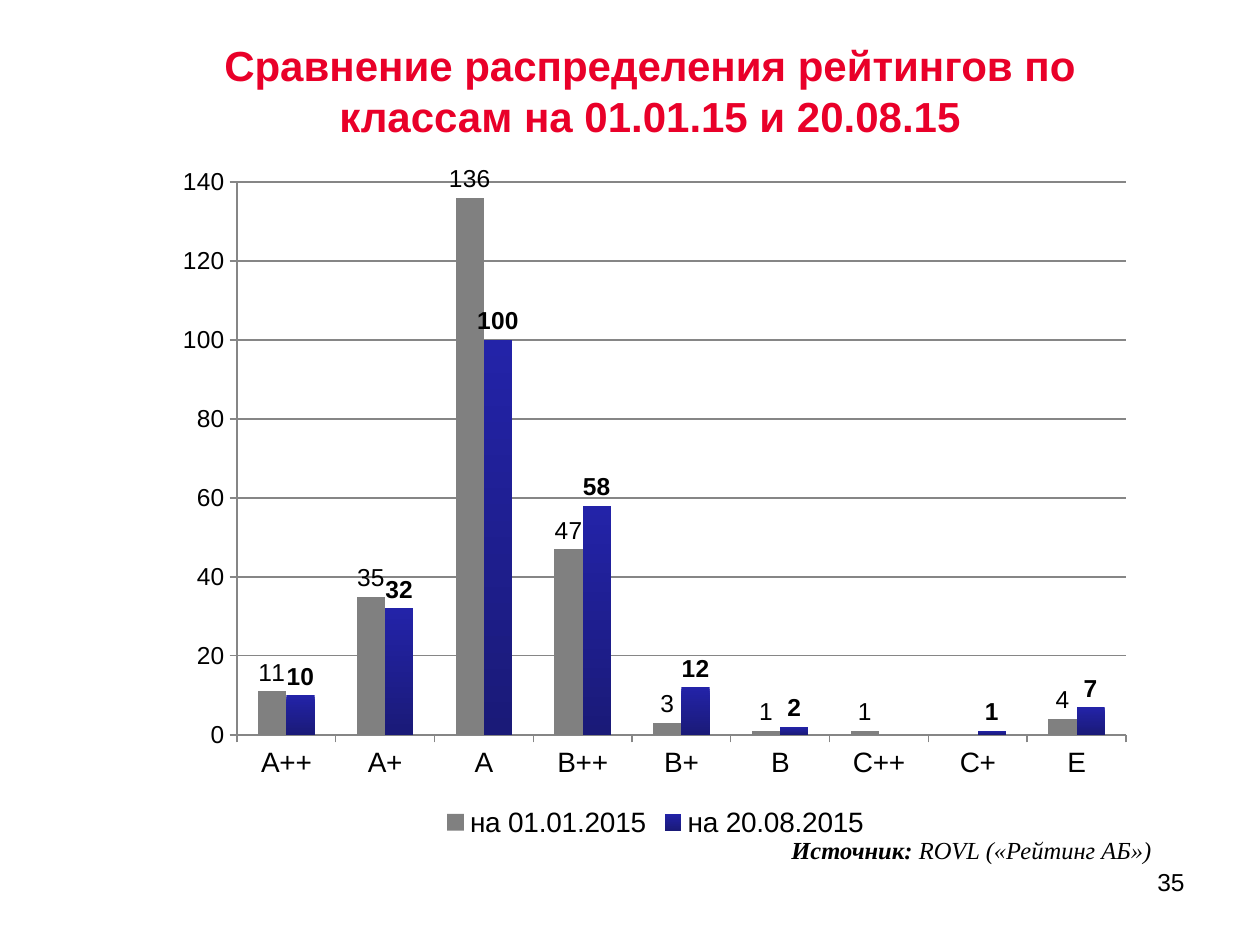
from lxml import etree
from pptx import Presentation
from pptx.chart.data import CategoryChartData
from pptx.dml.color import RGBColor
from pptx.enum.chart import XL_CHART_TYPE, XL_LABEL_POSITION, XL_LEGEND_POSITION, XL_TICK_MARK
from pptx.enum.text import MSO_ANCHOR, PP_ALIGN
from pptx.util import Pt

PX = 914400 / 126
RED = RGBColor(0xE9, 0x00, 0x29)
BLACK = RGBColor(0, 0, 0)
GRAY = RGBColor(0x80, 0x80, 0x80)
AXIS_GRAY = RGBColor(0x86, 0x86, 0x86)
BLUE_TOP = RGBColor(0x23, 0x23, 0xA8)
BLUE_BOTTOM = RGBColor(0x1A, 0x1A, 0x78)
COLUMNS = XL_CHART_TYPE.COLUMN_CLUSTERED
OUTSIDE_END = XL_LABEL_POSITION.OUTSIDE_END
BOTTOM = XL_LEGEND_POSITION.BOTTOM
TICK_OUT = XL_TICK_MARK.OUTSIDE
MIDDLE = MSO_ANCHOR.MIDDLE
CENTER, RIGHT = PP_ALIGN.CENTER, PP_ALIGN.RIGHT


def box(*lengths):
    """Turn px lengths into EMU."""
    return [round(length * PX) for length in lengths]


def set_font(font, size, bold=False, color=BLACK, name="Arial"):
    font.name = name
    font.size = Pt(size)
    font.bold = bold
    font.color.rgb = color


presentation = Presentation()
presentation.slide_width, presentation.slide_height = box(1260, 945)
slide = presentation.slides.add_slide(presentation.slide_layouts[5])

# Title
title = slide.shapes.title
title.left, title.top, title.width, title.height = box(134, 45, 1032, 90)
title.text_frame.text = "Сравнение распределения рейтингов по классам на 01.01.15 и 20.08.15"
title.text_frame.vertical_anchor = MIDDLE
paragraph = title.text_frame.paragraphs[0]
paragraph.alignment = CENTER
set_font(paragraph.font, 24, True, RED)

# Rating chart
chart_data = CategoryChartData()
chart_data.categories = ["А++", "А+", "А", "В++", "В+", "В", "С++", "С+", "Е"]
chart_data.add_series("на 01.01.2015", [11, 35, 136, 47, 3, 1, 1, None, 4])
chart_data.add_series("на 20.08.2015", [10, 32, 100, 58, 12, 2, None, 1, 7])
chart = slide.shapes.add_chart(COLUMNS, *box(164, 155, 983, 688), chart_data).chart
set_font(chart.font, 10)
chart.has_title = False
chart.has_legend = True
chart.legend.position = BOTTOM
chart.legend.include_in_layout = False
set_font(chart.legend.font, 16)

value_axis = chart.value_axis
value_axis.minimum_scale, value_axis.maximum_scale, value_axis.major_unit = 0, 140, 20
value_axis.major_gridlines.format.line.color.rgb = AXIS_GRAY
for axis, size in ((chart.category_axis, 16), (value_axis, 14)):
    axis.major_tick_mark = TICK_OUT
    axis.format.line.color.rgb = AXIS_GRAY
    set_font(axis.tick_labels.font, size)

plot = chart.plots[0]
plot.gap_width = 150
plot.overlap = 0
plot.vary_by_categories = False
for series, bold in zip(plot.series, (False, True)):
    series.invert_if_negative = False
    labels = series.data_labels
    labels.show_value = True
    labels.position = OUTSIDE_END
    set_font(labels.font, 14, bold)

before, after = plot.series
before.format.fill.solid()
before.format.fill.fore_color.rgb = GRAY
after_fill = after.format.fill
after_fill.gradient()
after_fill.gradient_angle = 270
for stop, color, position in zip(after_fill.gradient_stops, (BLUE_TOP, BLUE_BOTTOM), (0, 1)):
    stop.color.rgb = color
    stop.position = position

# Fixed inner plot area, as shares of the chart
plot_area = plot._element.getparent()
namespace = "{%s}" % plot_area.nsmap["c"]
for old_layout in plot_area.findall(namespace + "layout"):
    plot_area.remove(old_layout)
layout = etree.Element(namespace + "layout")
plot_area.insert(0, layout)
manual = etree.SubElement(layout, namespace + "manualLayout")
for tag, value in (("layoutTarget", "inner"), ("xMode", "edge"), ("yMode", "edge"),
                   ("x", 73 / 983), ("y", 27 / 688), ("w", 889 / 983), ("h", 553 / 688)):
    etree.SubElement(manual, namespace + tag).set("val", str(value))

# Source line
source = slide.shapes.add_textbox(*box(779, 829, 416, 43))
source.text_frame.word_wrap = True
paragraph = source.text_frame.paragraphs[0]
for text, bold in (("Источник: ", True), ("ROVL («Рейтинг АБ»)", False)):
    run = paragraph.add_run()
    run.text = text
    set_font(run.font, 14, bold, name="Times New Roman")
    run.font.italic = True

# Page number
page_number = slide.shapes.add_textbox(*box(903, 861, 294, 66))
page_number.text_frame.word_wrap = True
page_number.text_frame.text = "35"
paragraph = page_number.text_frame.paragraphs[0]
paragraph.alignment = RIGHT
set_font(paragraph.font, 14)

presentation.save("out.pptx")
